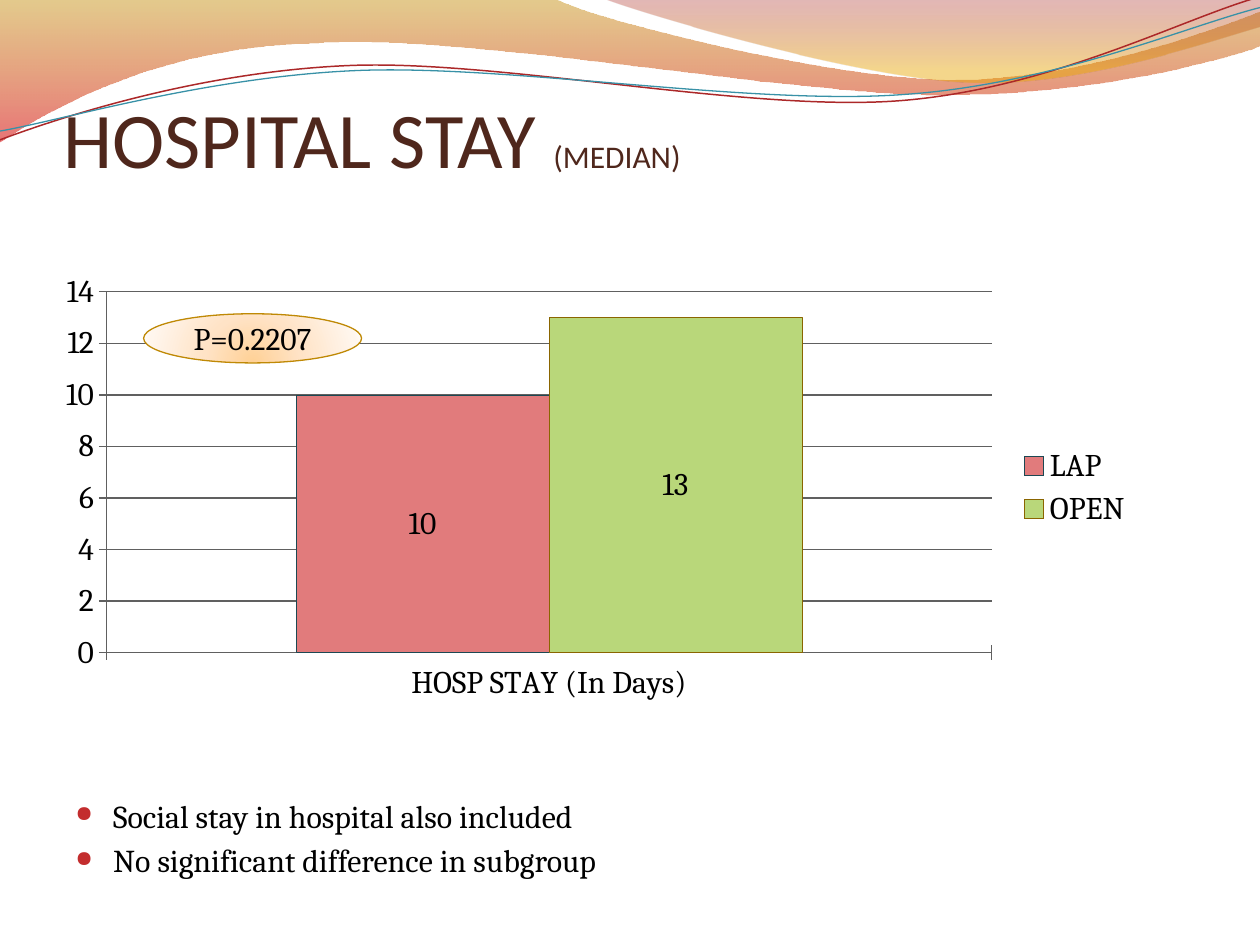
from math import cos, radians, sin

from lxml.etree import SubElement
from pptx import Presentation
from pptx.chart.data import CategoryChartData as ChartData
from pptx.dml.color import RGBColor
from pptx.enum.chart import XL_CHART_TYPE as Kind
from pptx.enum.chart import XL_LABEL_POSITION as Spot
from pptx.enum.chart import XL_LEGEND_POSITION as Side
from pptx.enum.chart import XL_TICK_MARK as Tick
from pptx.enum.shapes import MSO_SHAPE as Preset
from pptx.enum.text import MSO_ANCHOR as Anchor
from pptx.enum.text import PP_ALIGN as Align
from pptx.oxml import parse_xml
from pptx.oxml.ns import nsdecls, qn
from pptx.util import Inches, Pt

# Grid of 100 columns by 75 rows on a 10 by 7.5 inch slide
COLS, ROWS = 100, 75
UNIT = Inches(10) // COLS

BLACK = RGBColor(0x00, 0x00, 0x00)
BROWN = RGBColor(0x4F, 0x27, 0x1C)
RED = RGBColor(0xC3, 0x2D, 0x2E)
GOLD = RGBColor(0xC3, 0x8B, 0x00)
SCARLET = RGBColor(0xD6, 0x03, 0x05)
MAROON = RGBColor(0xA1, 0x11, 0x12)
AMBER = RGBColor(0xE9, 0xA6, 0x00)
CRIMSON = RGBColor(0xAC, 0x28, 0x29)
TEAL = RGBColor(0x38, 0x91, 0xA7)
NAVY = RGBColor(0x1C, 0x48, 0x53)
OCHRE = RGBColor(0x8A, 0x65, 0x00)
PINK = RGBColor(0xE1, 0x7B, 0x7C)
GREEN = RGBColor(0xB9, 0xD7, 0x7A)
GREY = RGBColor(0x60, 0x60, 0x60)
RIM = RGBColor(0xBF, 0x89, 0x05)
GLOW = [(0, RGBColor(0xFF, 0xD1, 0x96), 100), (43, RGBColor(0xFF, 0xE3, 0xC6), 100),
        (93, RGBColor(0xFF, 0xF6, 0xED), 100), (100, RGBColor(0xFF, 0xFC, 0xF9), 100)]

# Waves: a start point, then points (2 numbers) or curves (6 numbers)
BAND = [(0, 0), (44, -0.1), (47.6, 1.7, 66.4, 6.3, 75.8, 6.3),
        (85.3, 6.3, 95.8, 2.6, 100, 0.9), (100.1, 3.6),
        (98.3, 4.4, 87, 7.6, 74.6, 7.5), (62.2, 7.5, 38.2, 2.8, 25.7, 3.4),
        (12.9, 3.6, 4.6, 8.3, -0.1, 11.3)]
CREST = [(47.9, -0.1), (50.9, 1.1, 68.2, 6.2, 76.9, 6.5),
         (85.6, 6.9, 96.1, 3.2, 100, 2.1), (100, 0)]
UPPER = [(0, 11.1), (4.8, 9.3, 15.8, 5.7, 27.7, 5.2),
         (39.5, 4.7, 59.3, 8.9, 71.3, 8), (83.3, 7.1, 93.8, 1.5, 99.8, -0.2)]
LOWER = [(0, 10.4), (4.7, 9.6, 16.4, 6.1, 28.3, 5.6),
         (40.3, 5.1, 59.7, 8.4, 71.7, 7.5), (83.6, 6.7, 94.1, 2.1, 100, 0.6)]
TILT = -2.7


def place(box):
    return [round(n * UNIT) for n in box]


def style(run, size, font, color):
    run.font.size, run.font.name = Pt(size), font
    run.font.color.rgb = color


def blend(shape, stops, course):
    """Gradient fill; stops are (place, colour, opacity) in per cent."""
    marks = "".join(
        f'<a:gs pos="{at * 1000}"><a:srgbClr val="{tint}">'
        f'<a:alpha val="{dense * 1000}"/></a:srgbClr></a:gs>'
        for at, tint, dense in stops)
    shape.fill.background()
    old = shape._element.spPr.find(qn("a:noFill"))
    old.getparent().replace(old, parse_xml(
        f'<a:gradFill {nsdecls("a")} rotWithShape="1">'
        f'<a:gsLst>{marks}</a:gsLst>{course}</a:gradFill>'))


def turn(point, hub, angle):
    c, s = cos(radians(angle)), sin(radians(angle))
    dx, dy = point[0] - hub[0], point[1] - hub[1]
    return hub[0] + dx * c - dy * s, hub[1] + dx * s + dy * c


def bend(shape, parts):
    """Join each three straight steps of a curved part into one curve."""
    steps = iter(list(shape._element.iter(qn("a:lnTo"))))
    for part in parts:
        first = next(steps)
        if len(part) == 6:
            first.tag = qn("a:cubicBezTo")
            curve = parse_xml(f'<a:cubicBezTo {nsdecls("a")}/>')
            first.getparent().replace(first, curve)
            for step in (first, next(steps), next(steps)):
                curve.append(step[0])
                if step is not first:
                    step.getparent().remove(step)


def add_waves(slide, box):
    left, top = box[:2]

    def draw(points, hub=(0, 0), tilt=0):
        knots = [turn(part[i:i + 2], hub, -tilt)
                 for part in points for i in range(0, len(part), 2)]
        spots = [(round((left + x) * UNIT), round((top + y) * UNIT)) for x, y in knots]
        pen = slide.shapes.build_freeform(*spots[0])
        pen.add_line_segments(spots[1:], close=not tilt)
        wave = pen.convert_to_shape()
        bend(wave, points[1:])
        wave.rotation = tilt % 360
        wave.shadow.inherit = False
        return wave

    down = '<a:lin ang="5400000" scaled="0"/>'
    for points, stops in ((BAND, [(0, GOLD, 45), (100, SCARLET, 55)]),
                          (CREST, [(0, MAROON, 30), (80, AMBER, 45)])):
        wave = draw(points)
        blend(wave, stops, down)
        wave.line.fill.background()
    for points, hub, tint, width in ((UPPER, (49.9, 5.75), CRIMSON, 0.85),
                                     (LOWER, (49.95, 5.9), TEAL, 0.75)):
        wave = draw(points, hub, TILT)
        wave.fill.background()
        wave.line.color.rgb, wave.line.width = tint, Pt(width)


def add_title(slide, box):
    title = slide.shapes.title
    title.left, title.top, title.width, title.height = place(box)
    frame = title.text_frame
    frame.margin_left = frame.margin_right = frame.margin_bottom = 0
    frame.margin_top = Inches(0.05)
    frame.vertical_anchor, frame.word_wrap = Anchor.BOTTOM, True
    para = frame.paragraphs[0]
    para.alignment = Align.LEFT
    for text, size in (("HOSPITAL STAY ", 45), ("(MEDIAN)", 18)):
        run = para.add_run()
        run.text = text
        style(run, size, "Calibri", BROWN)
    # Lift the title above the waves
    slide.shapes._spTree.append(title._element)


def add_chart(slide, box):
    data = ChartData()
    data.categories = ["HOSP STAY (In Days)"]
    data.add_series("LAP", [10])
    data.add_series("OPEN", [13])
    chart = slide.shapes.add_chart(Kind.COLUMN_CLUSTERED, *place(box), data).chart
    chart.has_title = False
    chart.font.size, chart.font.name = Pt(18), "Cambria"
    chart.font.color.rgb = BLACK
    chart.has_legend = True
    chart.legend.position, chart.legend.include_in_layout = Side.RIGHT, False

    plot = chart.plots[0]
    plot.gap_width, plot.overlap, plot.vary_by_categories = 150, 0, False
    for bars, tint, edge in zip(plot.series, (PINK, GREEN), (NAVY, OCHRE)):
        bars.format.fill.solid()
        bars.format.fill.fore_color.rgb = tint
        bars.format.line.color.rgb, bars.format.line.width = edge, Pt(0.25)
        bars.data_labels.show_value = True
        bars.data_labels.position = Spot.CENTER

    for axis in (chart.category_axis, chart.value_axis):
        axis.major_tick_mark = Tick.CROSS
        axis.format.line.color.rgb = GREY
    chart.value_axis.has_major_gridlines = True
    chart.value_axis.major_gridlines.format.line.color.rgb = GREY


def add_badge(slide, box):
    badge = slide.shapes.add_shape(Preset.OVAL, *place(box))
    blend(badge, GLOW, '<a:path path="circle">'
          '<a:fillToRect l="50000" t="130000" r="50000" b="-30000"/></a:path>')
    badge.line.color.rgb, badge.line.width = RIM, Pt(0.75)
    badge.shadow.inherit = False
    frame = badge.text_frame
    frame.vertical_anchor, frame.word_wrap = Anchor.MIDDLE, False
    para = frame.paragraphs[0]
    para.alignment = Align.CENTER
    run = para.add_run()
    run.text = "P=0.2207"
    style(run, 18, "Cambria", BLACK)


def add_notes(slide, box):
    frame = slide.shapes.add_textbox(*place(box)).text_frame
    frame.word_wrap = True
    lines = ("Social stay in hospital also included", "No significant difference in subgroup")
    for i, text in enumerate(lines):
        para = frame.add_paragraph() if i else frame.paragraphs[0]
        para.space_before = Pt(3.6)
        props = para._p.get_or_add_pPr()
        props.set("marL", str(Inches(0.3)))
        props.set("indent", str(-Inches(0.3)))
        SubElement(SubElement(props, qn("a:buClr")), qn("a:srgbClr"), val=str(RED))
        SubElement(props, qn("a:buSzPct"), val="70000")
        SubElement(props, qn("a:buChar"), char="●")
        run = para.add_run()
        run.text = text
        style(run, 18.2, "Cambria", BLACK)


def main():
    deck = Presentation()
    deck.slide_width, deck.slide_height = COLS * UNIT, ROWS * UNIT
    slide = deck.slides.add_slide(deck.slide_layouts[5])
    add_waves(slide, (0, 0, COLS, 11.3))
    add_title(slide, (5, 7.65, 90, 7))
    add_notes(slide, (5, 62.7, 84.4, 6.8))
    add_chart(slide, (3.5, 21, 87.4, 35.4))
    add_badge(slide, (11.4, 24.9, 17.3, 3.9))
    deck.save("out.pptx")


if __name__ == "__main__":
    main()
